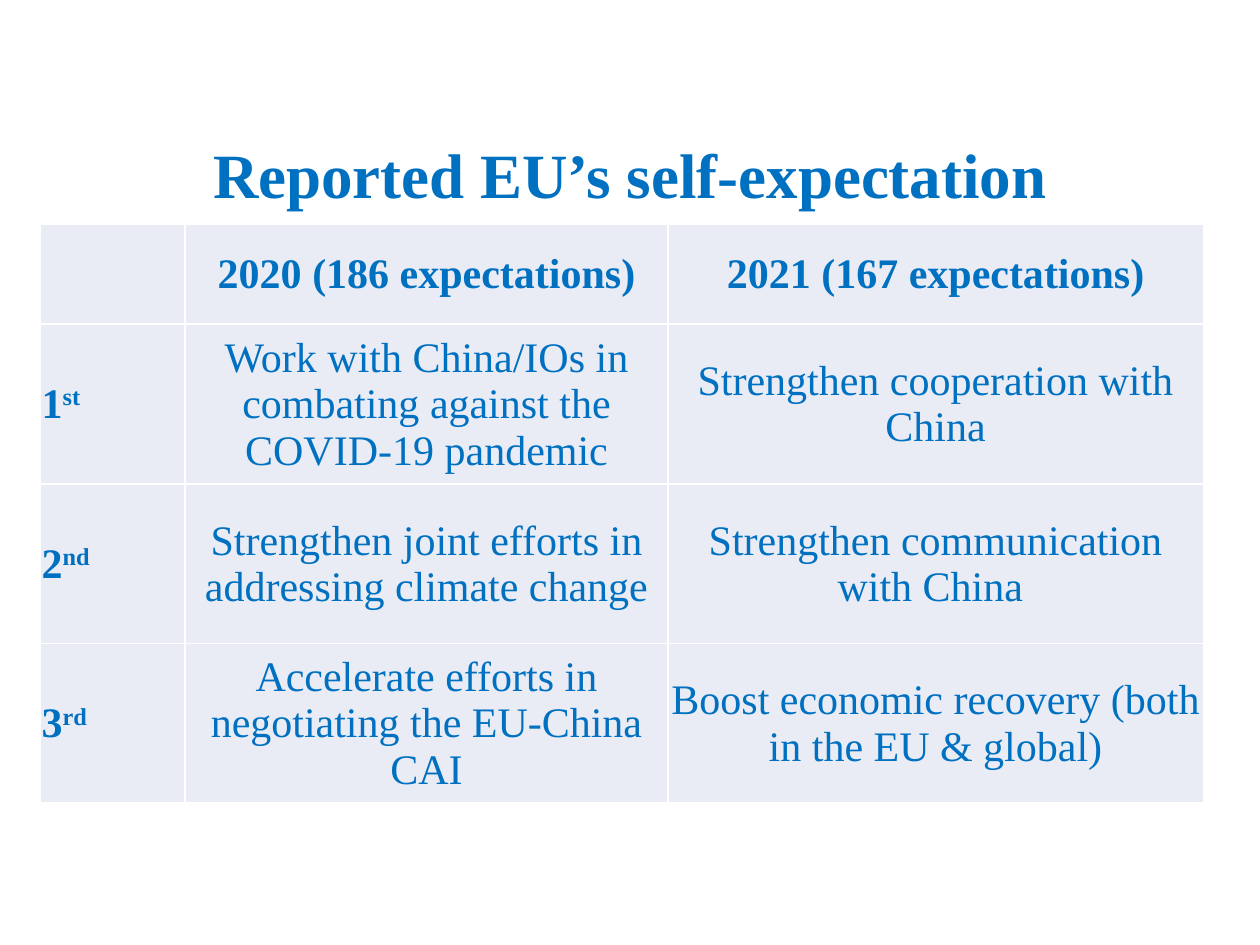
"""Build the slide that ranks the EU's reported self-expectations."""
from dataclasses import dataclass

from lxml import etree
from pptx import Presentation
from pptx.dml.color import RGBColor
from pptx.enum import text
from pptx.oxml import ns
from pptx.util import Inches, Pt

FONT = "Times New Roman"
BLUE = "0070C0"
PALE = "E9EBF5"
WHITE = "FFFFFF"
COLUMN_WIDTHS = (1.15, 3.83, 4.25)
ROW_HEIGHTS = (0.79, 1.27, 1.27, 1.26)
HEADINGS = ("2020 (186 expectations)", "2021 (167 expectations)")


@dataclass
class Rank:
    number: str
    suffix: str
    answers: tuple[str, str]


RANKS = (
    Rank("1", "st", ("Work with China/IOs in combating against the COVID-19 pandemic",
                     "Strengthen cooperation with China")),
    Rank("2", "nd", ("Strengthen joint efforts in addressing climate change",
                     "Strengthen communication with China ")),
    Rank("3", "rd", ("Accelerate efforts in negotiating the EU-China CAI",
                     "Boost economic recovery (both in the EU & global)")),
)


def color(value: str) -> RGBColor:
    return RGBColor.from_string(value)


def style(para, size: float, bold: bool, align) -> None:
    para.alignment = align
    para.font.name = FONT
    para.font.size = Pt(size)
    para.font.bold = bold
    para.font.color.rgb = color(BLUE)


def add_borders(cell) -> None:
    properties = cell._tc.get_or_add_tcPr()
    for side in ("lnL", "lnR", "lnT", "lnB"):
        line = etree.SubElement(properties, ns.qn(f"a:{side}"), w=str(Pt(1)))
        fill = etree.SubElement(line, ns.qn("a:solidFill"))
        etree.SubElement(fill, ns.qn("a:srgbClr"), val=WHITE)


def write_cell(cell, words: str, bold: bool, align=text.PP_ALIGN.CENTER,
               superscript: str = "") -> None:
    cell.vertical_anchor = text.MSO_ANCHOR.MIDDLE
    cell.margin_left = cell.margin_right = cell.margin_top = Inches(0.01)
    cell.margin_bottom = 0
    para = cell.text_frame.paragraphs[0]
    para.add_run().text = words
    if superscript:
        span = para.add_run()
        span.text = superscript
        span._r.get_or_add_rPr().set("baseline", "30000")
    style(para, 24, bold, align)


def add_title(page) -> None:
    title = page.shapes.title
    title.left, title.top = Inches(0.32), Inches(0.94)
    title.width, title.height = Inches(9.36), Inches(0.95)
    title.text_frame.text = "Reported EU’s self-expectation"
    title.text_frame.vertical_anchor = text.MSO_ANCHOR.MIDDLE
    para = title.text_frame.paragraphs[0]
    para.line_spacing = 0.9
    style(para, 36, True, text.PP_ALIGN.CENTER)


def add_ranking(page) -> None:
    frame = page.shapes.add_table(
        len(ROW_HEIGHTS), len(COLUMN_WIDTHS), Inches(0.32), Inches(1.78),
        Inches(sum(COLUMN_WIDTHS)), Inches(sum(ROW_HEIGHTS)))
    table = frame.table
    table.horz_banding = False
    for column, width in zip(table.columns, COLUMN_WIDTHS):
        column.width = Inches(width)
    for row, height in zip(table.rows, ROW_HEIGHTS):
        row.height = Inches(height)
    for cell in table.iter_cells():
        add_borders(cell)
        cell.fill.solid()
        cell.fill.fore_color.rgb = color(PALE)
    for column, heading in enumerate(HEADINGS, 1):
        write_cell(table.cell(0, column), heading, True)
    for row, rank in enumerate(RANKS, 1):
        write_cell(table.cell(row, 0), rank.number, True,
                   text.PP_ALIGN.LEFT, rank.suffix)
        for column, answer in enumerate(rank.answers, 1):
            write_cell(table.cell(row, column), answer, False)


def main() -> None:
    deck = Presentation()
    deck.slide_width, deck.slide_height = Inches(10), Inches(7.5)
    page = deck.slides.add_slide(deck.slide_layouts.get_by_name("Title Only"))
    add_title(page)
    add_ranking(page)
    deck.save("out.pptx")


if __name__ == "__main__":
    main()
